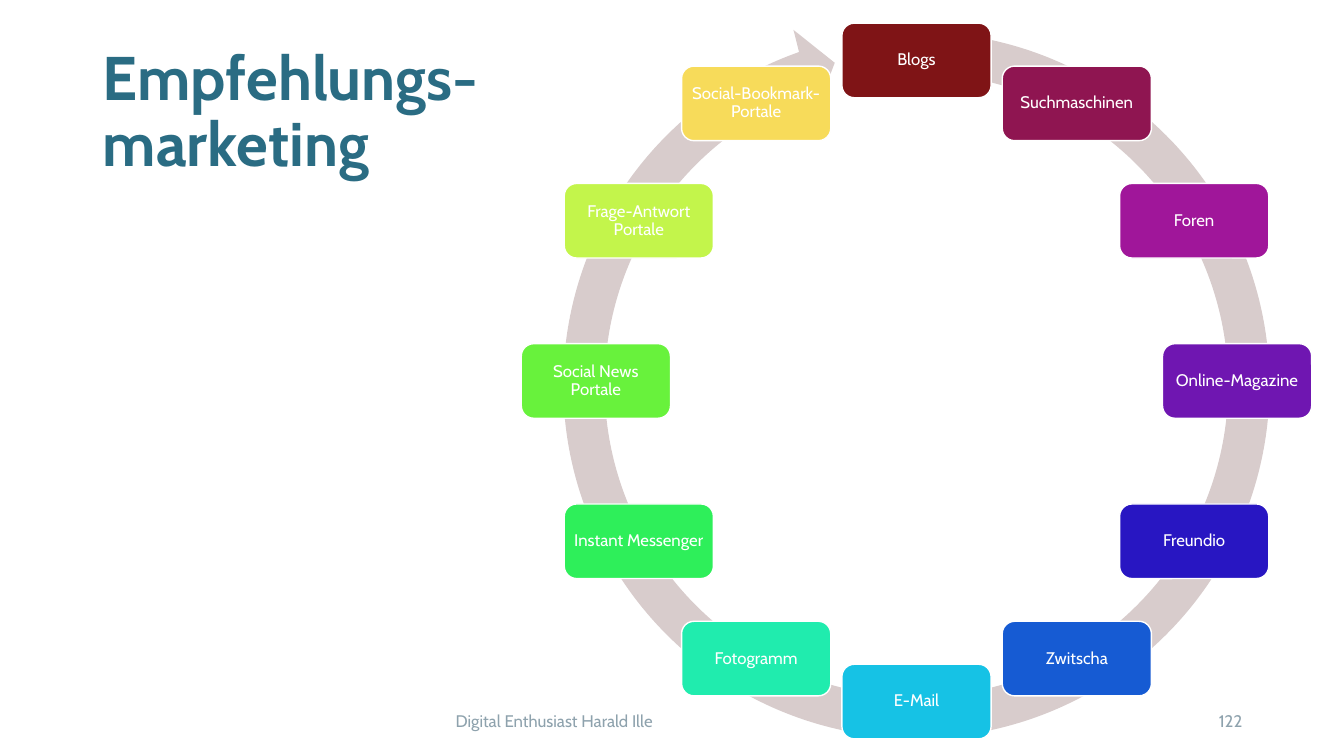
import math

import pptx
import pptx.dml.color
import pptx.enum.shapes
import pptx.enum.text
import pptx.util
from pptx.util import Inches

FONT = "Cabin"
ALIGN = pptx.enum.text.PP_ALIGN
SHAPES = pptx.enum.shapes.MSO_SHAPE

# Cycle geometry in inches
CENTER_X, CENTER_Y, RADIUS = 9.09, 3.78, 3.18
NODE_WIDTH, NODE_HEIGHT = 1.48, 0.74
RING_SIZE = 7.46

# Channels clockwise from the top
CHANNELS = [
    ("Blogs", "7F1416"),
    ("Suchmaschinen", "8F1551"),
    ("Foren", "A0169A"),
    ("Online-Magazine", "6F16B1"),
    ("Freundio", "2816C2"),
    ("Zwitscha", "165BD3"),
    ("E-Mail", "16C2E5"),
    ("Fotogramm", "20ECAE"),
    ("Instant Messenger", "2EEF5A"),
    ("Social News Portale", "68F23C"),
    ("Frage-Antwort Portale", "C3F54B"),
    ("Social-Bookmark-Portale", "F7DB5A"),
]


def color(hex_value):
    return pptx.dml.color.RGBColor.from_string(hex_value)


def write(frame, lines, size, hex_value, align, bold=False, spacing=None):
    frame.word_wrap = True
    frame.vertical_anchor = pptx.enum.text.MSO_ANCHOR.MIDDLE
    paragraph = frame.paragraphs[0]
    paragraph.alignment = align
    paragraph.line_spacing = spacing
    for index, line in enumerate(lines):
        if index:
            paragraph.add_line_break()
        run = paragraph.add_run()
        run.text = line
        run.font.name = FONT
        run.font.size = pptx.util.Pt(size)
        run.font.bold = bold
        run.font.color.rgb = color(hex_value)


def add_title(slide, lines):
    title = slide.shapes.title
    title.left, title.top = Inches(0.92), Inches(0.4)
    title.width, title.height = Inches(11.5), Inches(1.45)
    title.text_frame.auto_size = pptx.enum.text.MSO_AUTO_SIZE.NONE
    write(title.text_frame, lines, 44, "2A6C83", ALIGN.LEFT, bold=True, spacing=0.9)


def add_footer(slide, text, left, width, align):
    footer = slide.shapes.add_textbox(Inches(left), Inches(6.95), Inches(width), Inches(0.4))
    write(footer.text_frame, [text], 12, "8EA2AD", align)


def add_filled(slide, kind, x, y, width, height, fill):
    """Add a filled shape centred on x, y."""
    shape = slide.shapes.add_shape(
        kind, Inches(x - width / 2), Inches(y - height / 2), Inches(width), Inches(height))
    shape.shadow.inherit = False
    shape.fill.solid()
    shape.fill.fore_color.rgb = color(fill)
    return shape


def add_ring(slide):
    ring = add_filled(slide, SHAPES.CIRCULAR_ARROW, CENTER_X, 3.82, RING_SIZE, RING_SIZE, "D8CCCC")
    ring.line.fill.background()
    for index, value in enumerate([0.055, 3.307, 150.16, 166.685, 0.058]):
        ring.adjustments[index] = value


def add_channel(slide, label, fill, angle):
    x = CENTER_X + RADIUS * math.sin(angle)
    y = CENTER_Y - RADIUS * math.cos(angle)
    channel = add_filled(slide, SHAPES.ROUNDED_RECTANGLE, x, y, NODE_WIDTH, NODE_HEIGHT, fill)
    channel.line.color.rgb = color("FFFFFF")
    channel.line.width = pptx.util.Pt(1)
    frame = channel.text_frame
    frame.margin_left = frame.margin_right = Inches(0.05)
    frame.margin_top = frame.margin_bottom = Inches(0.05)
    write(frame, [label], 12, "FFFFFF", ALIGN.CENTER, spacing=0.9)


def main():
    deck = pptx.Presentation()
    deck.slide_width, deck.slide_height = Inches(13.33), Inches(7.5)
    slide = deck.slides.add_slide(deck.slide_layouts[5])

    # Title and footer
    add_title(slide, ["Empfehlungs-", "marketing"])
    add_footer(slide, "Digital Enthusiast Harald Ille", 4.42, 4.5, ALIGN.LEFT)
    add_footer(slide, "122", 9.42, 3, ALIGN.RIGHT)

    # Cycle of channels
    add_ring(slide)
    for index, (label, fill) in enumerate(CHANNELS):
        add_channel(slide, label, fill, math.tau * index / len(CHANNELS))

    deck.save("out.pptx")


if __name__ == "__main__":
    main()
